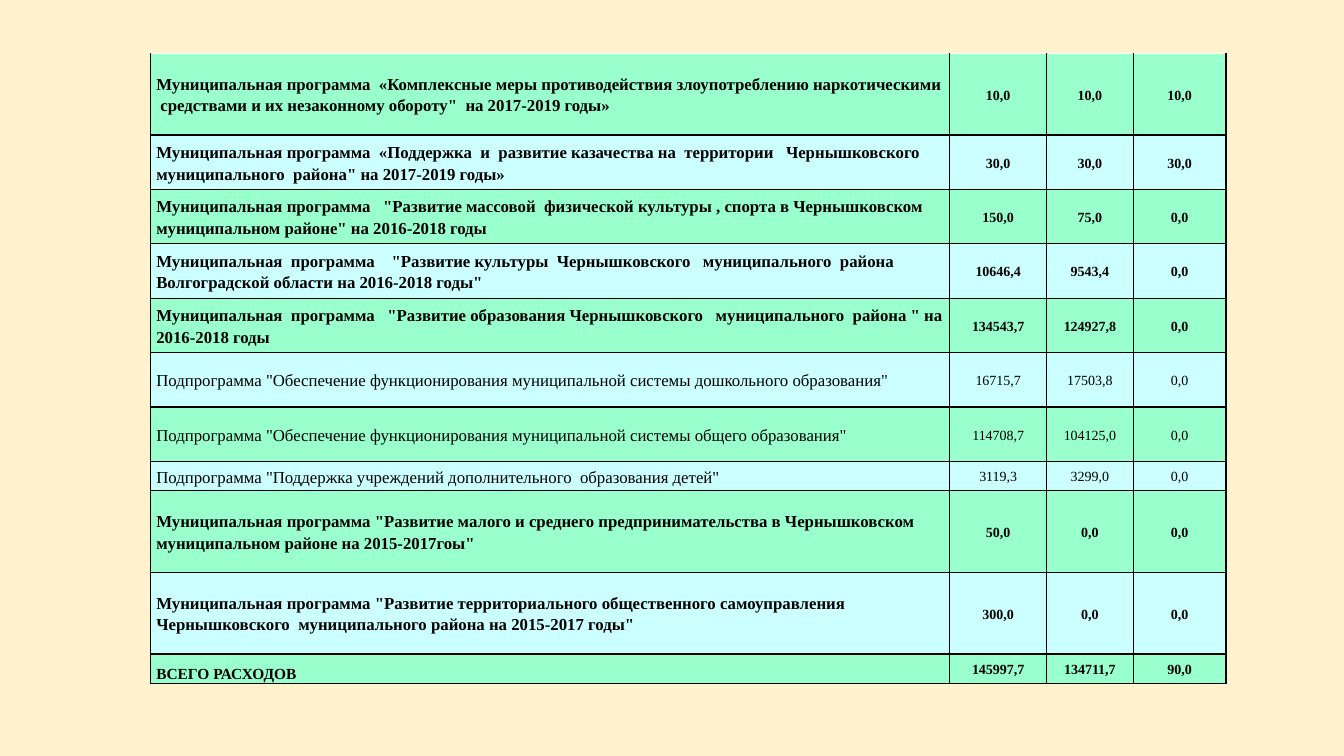
from lxml.etree import SubElement
from pptx import Presentation
from pptx.dml.color import RGBColor
from pptx.enum.text import MSO_ANCHOR, PP_ALIGN
from pptx.oxml.ns import qn
from pptx.util import Inches, Pt

CREAM = RGBColor(0xFF, 0xF2, 0xCC)
MINT = RGBColor(0x99, 0xFF, 0xCC)
AQUA = RGBColor(0xCC, 0xFF, 0xFF)
BLACK = RGBColor(0, 0, 0)
FONT = "Times New Roman"

COLS = [7.93, 0.96, 0.86, 0.92]
TALL, MID, LOW = 0.81, 0.54, 0.29

# Row height, program name, three yearly sums
ROWS = [
    (TALL, 'Муниципальная программа  «Комплексные меры противодействия злоупотреблению '
     'наркотическими  средствами и их незаконному обороту"  на 2017-2019 годы»',
     "10,0", "10,0", "10,0"),
    (MID, 'Муниципальная программа  «Поддержка  и  развитие казачества на  территории   '
     'Чернышковского  муниципального  района" на 2017-2019 годы»',
     "30,0", "30,0", "30,0"),
    (MID, 'Муниципальная программа   "Развитие массовой  физической культуры , спорта '
     'в Чернышковском  муниципальном районе" на 2016-2018 годы',
     "150,0", "75,0", "0,0"),
    (MID, 'Муниципальная  программа    "Развитие культуры  Чернышковского   '
     'муниципального  района Волгоградской области на 2016-2018 годы"',
     "10646,4", "9543,4", "0,0"),
    (MID, 'Муниципальная  программа   "Развитие образования Чернышковского   '
     'муниципального  района " на 2016-2018 годы',
     "134543,7", "124927,8", "0,0"),
    (MID, 'Подпрограмма "Обеспечение функционирования муниципальной системы '
     'дошкольного образования"', "16715,7", "17503,8", "0,0"),
    (MID, 'Подпрограмма "Обеспечение функционирования муниципальной системы '
     'общего образования"', "114708,7", "104125,0", "0,0"),
    (LOW, 'Подпрограмма "Поддержка учреждений дополнительного  образования детей"',
     "3119,3", "3299,0", "0,0"),
    (TALL, 'Муниципальная программа "Развитие малого и среднего предпринимательства '
     'в Чернышковском  муниципальном районе на 2015-2017гоы"',
     "50,0", "0,0", "0,0"),
    (TALL, 'Муниципальная программа "Развитие территориального общественного '
     'самоуправления Чернышковского  муниципального района на 2015-2017 годы"',
     "300,0", "0,0", "0,0"),
    (LOW, "ВСЕГО РАСХОДОВ", "145997,7", "134711,7", "90,0"),
]


def put_text(cell, text, size=10, bold=False, align=PP_ALIGN.CENTER,
             anchor=MSO_ANCHOR.MIDDLE):
    cell.margin_left = cell.margin_right = Inches(0.06)
    cell.margin_top = cell.margin_bottom = 0
    cell.vertical_anchor = anchor
    para = cell.text_frame.paragraphs[0]
    para.alignment = align
    para.line_spacing = 1.15
    para.space_after = Pt(10)
    run = para.add_run()
    run.text = text
    run.font.name = FONT
    run.font.size = Pt(size)
    run.font.bold = bold
    run.font.color.rgb = BLACK


def rule_cell(cell, sides):
    """Draw thin black borders; call before the fill is set."""
    props = cell._tc.get_or_add_tcPr()
    for side in sides:
        line = SubElement(props, qn(f"a:ln{side}"), w=str(Pt(1)))
        fill = SubElement(line, qn("a:solidFill"))
        SubElement(fill, qn("a:srgbClr"), val=str(BLACK))


def add_costs(slide, left, top):
    """Place the table of program costs with its corner at left, top."""
    high = sum(row[0] for row in ROWS)
    table = slide.shapes.add_table(
        len(ROWS), len(COLS), Inches(left), Inches(top),
        Inches(sum(COLS)), Inches(high)).table
    table.first_row = table.horz_banding = False
    for col, width in zip(table.columns, COLS):
        col.width = Inches(width)
    for r, (height, *texts) in enumerate(ROWS):
        table.rows[r].height = Inches(height)
        total = r == len(ROWS) - 1
        bold = not texts[0].startswith("Подпрограмма")
        for c, text in enumerate(texts):
            cell = table.cell(r, c)
            rule_cell(cell, "LRTB" if r else "LRB")
            cell.fill.solid()
            cell.fill.fore_color.rgb = AQUA if r % 2 else MINT
            if c:
                put_text(cell, text, bold=bold)
            else:
                put_text(cell, text, size=11 if total else 12, bold=bold,
                         align=PP_ALIGN.LEFT,
                         anchor=MSO_ANCHOR.BOTTOM if total else MSO_ANCHOR.MIDDLE)


def main():
    deck = Presentation()
    deck.slide_width, deck.slide_height = Inches(13.33), Inches(7.5)
    slide = deck.slides.add_slide(deck.slide_layouts[6])
    back = slide.background.fill
    back.solid()
    back.fore_color.rgb = CREAM
    add_costs(slide, 1.49, 0.53)
    deck.save("out.pptx")


if __name__ == "__main__":
    main()
